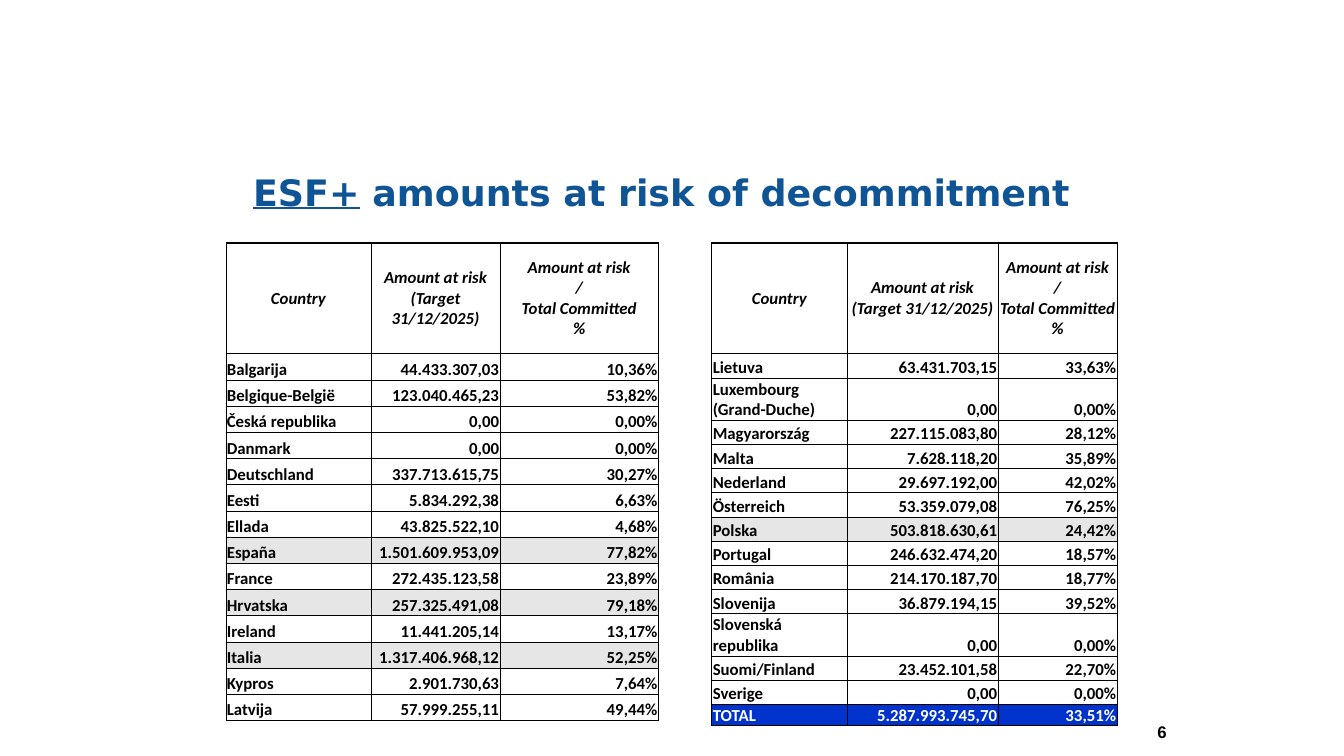
from copy import deepcopy

from lxml import etree
from pptx import Presentation
from pptx.dml.color import RGBColor
from pptx.enum.text import MSO_ANCHOR, MSO_AUTO_SIZE, PP_ALIGN
from pptx.oxml.ns import qn
from pptx.util import Inches, Pt

LEFT, CENTER, RIGHT = PP_ALIGN.LEFT, PP_ALIGN.CENTER, PP_ALIGN.RIGHT
MIDDLE, BOTTOM = MSO_ANCHOR.MIDDLE, MSO_ANCHOR.BOTTOM
BLACK = RGBColor(0x00, 0x00, 0x00)
WHITE = RGBColor(0xFF, 0xFF, 0xFF)
TITLE_BLUE = RGBColor(0x0F, 0x54, 0x94)
TOTAL_BLUE = RGBColor(0x00, 0x33, 0xCC)
HIGHLIGHT_GREY = RGBColor(0xE6, 0xE6, 0xE6)


def write(paragraph, text, size=12, font="Calibri", color=BLACK, align=LEFT,
          italic=False, underline=False):
    """Append bold text; a vertical tab in it breaks the line."""
    paragraph.alignment = align
    for i, line in enumerate(text.split("\v")):
        if i:
            paragraph.add_line_break()
        run = paragraph.add_run()
        run.text = line
        run.font.size, run.font.name, run.font.bold = Pt(size), font, True
        run.font.italic, run.font.underline = italic, underline
        run.font.color.rgb = color
    # Line breaks take the format of the text around them
    for line_break in paragraph._p.findall(qn("a:br")):
        line_break.append(deepcopy(run._r.rPr))


def set_borders(cell, top_width):
    properties = cell._tc.get_or_add_tcPr()
    for side, width in (("L", 0.5), ("R", 0.5), ("T", top_width), ("B", 0.5)):
        line = etree.SubElement(properties, qn(f"a:ln{side}"), w=str(Pt(width)))
        fill = etree.SubElement(line, qn("a:solidFill"))
        etree.SubElement(fill, qn("a:srgbClr"), val=str(BLACK))


HEADERS = ["Country", "Amount at risk\v(Target 31/12/2025)",
           "Amount at risk\n/\vTotal Committed\v%"]
HIGHLIGHTED = {"España", "Hrvatska", "Italia", "Polska"}
TWO_LINES = {"Luxembourg (Grand-Duche)", "Slovenská republika"}

FIRST_HALF = [
    ("Balgarija", "44.433.307,03", "10,36%"),
    ("Belgique-België", "123.040.465,23", "53,82%"),
    ("Česká republika", "0,00", "0,00%"),
    ("Danmark", "0,00", "0,00%"),
    ("Deutschland", "337.713.615,75", "30,27%"),
    ("Eesti", "5.834.292,38", "6,63%"),
    ("Ellada", "43.825.522,10", "4,68%"),
    ("España", "1.501.609.953,09", "77,82%"),
    ("France", "272.435.123,58", "23,89%"),
    ("Hrvatska", "257.325.491,08", "79,18%"),
    ("Ireland", "11.441.205,14", "13,17%"),
    ("Italia", "1.317.406.968,12", "52,25%"),
    ("Kypros", "2.901.730,63", "7,64%"),
    ("Latvija", "57.999.255,11", "49,44%"),
]
SECOND_HALF = [
    ("Lietuva", "63.431.703,15", "33,63%"),
    ("Luxembourg (Grand-Duche)", "0,00", "0,00%"),
    ("Magyarország", "227.115.083,80", "28,12%"),
    ("Malta", "7.628.118,20", "35,89%"),
    ("Nederland", "29.697.192,00", "42,02%"),
    ("Österreich", "53.359.079,08", "76,25%"),
    ("Polska", "503.818.630,61", "24,42%"),
    ("Portugal", "246.632.474,20", "18,57%"),
    ("România", "214.170.187,70", "18,77%"),
    ("Slovenija", "36.879.194,15", "39,52%"),
    ("Slovenská republika", "0,00", "0,00%"),
    ("Suomi/Finland", "23.452.101,58", "22,70%"),
    ("Sverige", "0,00", "0,00%"),
    ("TOTAL", "5.287.993.745,70", "33,51%"),
]
# Left edge, column widths, header height, row height, countries
HALVES = [
    (2.24, (1.44, 1.28, 1.57), 1.1, 0.26, FIRST_HALF),
    (7.06, (1.34, 1.5, 1.18), 1.1, 0.24, SECOND_HALF),
]
TABLE_TOP = 2.41

deck = Presentation()
deck.slide_width, deck.slide_height = Inches(13.33), Inches(7.5)
slide = deck.slides.add_slide(deck.slide_layouts[5])

# Title
title = slide.shapes.title
title.left, title.top = Inches(1.67), Inches(1.39)
title.width, title.height = Inches(9.79), Inches(1.02)
title.text_frame.auto_size = MSO_AUTO_SIZE.NONE
title.text_frame.vertical_anchor = MIDDLE
heading = title.text_frame.paragraphs[0]
for words, underlined in (("ESF+", True), (" amounts at risk of decommitment", False)):
    write(heading, words, size=26, font="DejaVu Sans", color=TITLE_BLUE,
          align=CENTER, underline=underlined)

# Country tables
for left, widths, header_height, row_height, countries in HALVES:
    rows = [HEADERS, *countries]
    heights = [header_height]
    for name, *_ in countries:
        heights.append(0.42 if name in TWO_LINES else 0.21 if name == "TOTAL" else row_height)
    table = slide.shapes.add_table(
        len(rows), len(widths), Inches(left), Inches(TABLE_TOP),
        Inches(sum(widths)), Inches(sum(heights))).table
    table.first_row = table.horz_banding = False
    for column, width in zip(table.columns, widths):
        column.width = Inches(width)

    for r, (values, height) in enumerate(zip(rows, heights)):
        table.rows[r].height = Inches(height)
        is_header, is_total = r == 0, values[0] == "TOTAL"
        for c, value in enumerate(values):
            cell = table.cell(r, c)
            inset = Inches(0 if is_header else 0.01)
            cell.margin_left = cell.margin_right = cell.margin_top = inset
            cell.margin_bottom = 0
            cell.vertical_anchor = MIDDLE if is_header or (is_total and c == 0) else BOTTOM
            set_borders(cell, top_width=1 if is_header else 0.5)
            if is_total or values[0] in HIGHLIGHTED:
                cell.fill.solid()
                cell.fill.fore_color.rgb = TOTAL_BLUE if is_total else HIGHLIGHT_GREY
            else:
                cell.fill.background()
            for i, part in enumerate(value.split("\n")):
                paragraphs = cell.text_frame
                write(paragraphs.add_paragraph() if i else paragraphs.paragraphs[0], part,
                      color=WHITE if is_total else BLACK, italic=is_header,
                      align=CENTER if is_header else RIGHT if c else LEFT)

# Page number
page_number = slide.shapes.add_textbox(Inches(11.08), Inches(7.11), Inches(0.59), Inches(0.39))
page_number.text_frame.word_wrap = True
write(page_number.text_frame.paragraphs[0], "6", font="Arial", align=RIGHT)

deck.save("out.pptx")
